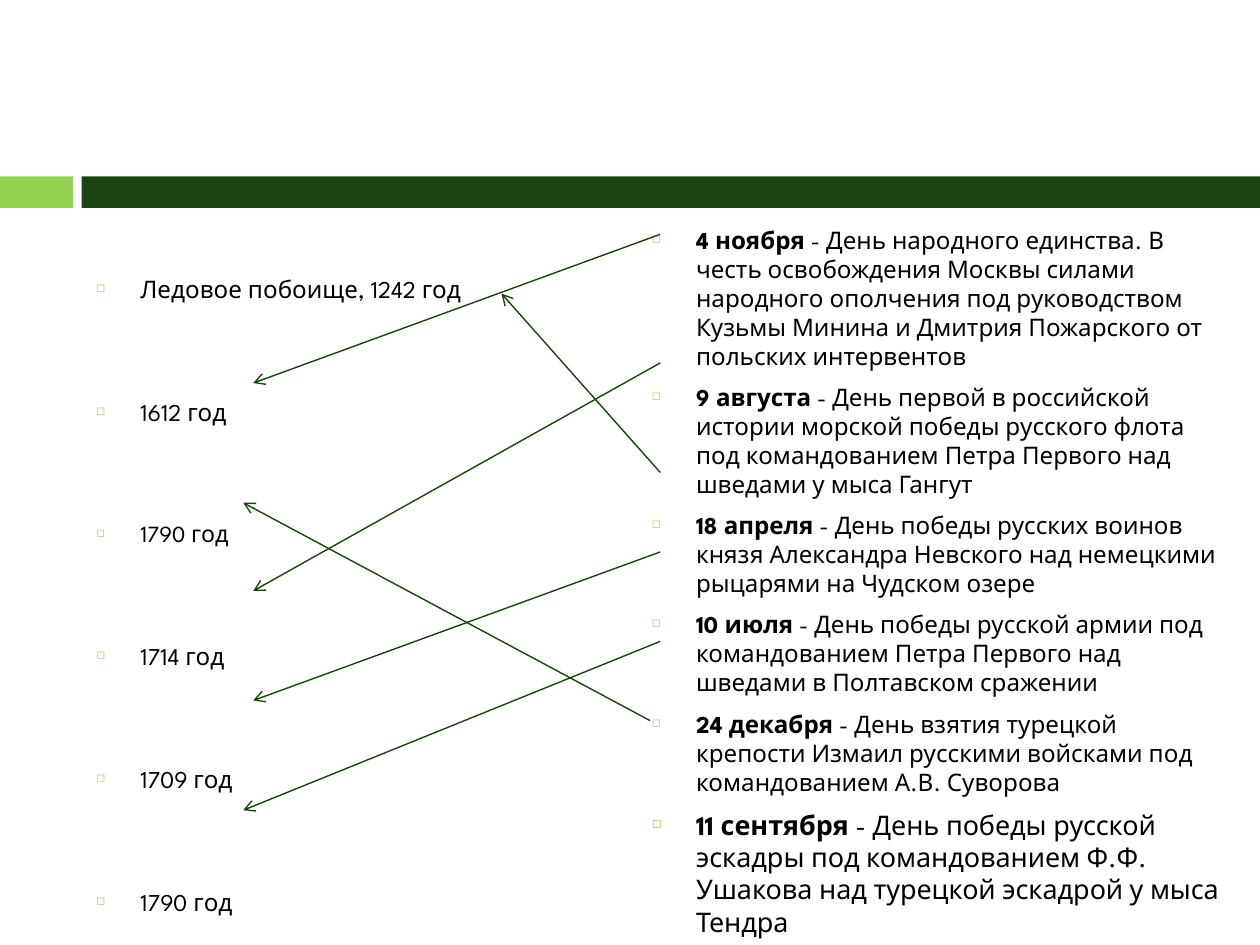
from lxml.etree import SubElement
from pptx import Presentation
from pptx.dml.color import RGBColor
from pptx.enum.shapes import MSO_CONNECTOR as Connector, MSO_SHAPE as Shape
from pptx.oxml.ns import qn
from pptx.util import Pt

LIME = RGBColor(0x92, 0xD0, 0x50)
FOREST = RGBColor(0x1A, 0x44, 0x10)
BLACK = RGBColor(0, 0, 0)
FONT = "League Spartan"
INDENT = 25.2

YEARS = [
    ("Ледовое побоище, 1242 год", 13.8),
    ("1612 год", 13.8),
    ("1790 год", 13.2),
    ("1714 год", 13.8),
    ("1709 год", 13.8),
    ("1790 год", 13.8),
]
DATES = [
    ("4 ноября", " - День народного единства. В честь освобождения Москвы силами народного "
     "ополчения под руководством Кузьмы Минина и Дмитрия Пожарского от польских интервентов", 13.8),
    ("9 августа", " - День первой в российской истории морской победы русского флота под "
     "командованием Петра Первого над шведами у мыса Гангут", 13.8),
    ("18 апреля", " - День победы русских воинов князя Александра Невского над немецкими "
     "рыцарями на Чудском озере", 13.8),
    ("10 июля", " - День победы русской армии под командованием Петра Первого над шведами "
     "в Полтавском сражении", 13.8),
    ("24 декабря", " - День взятия турецкой крепости Измаил русскими войсками под "
     "командованием А.В. Суворова", 13.8),
    ("11 сентября", " - День победы русской эскадры под командованием Ф.Ф. Ушакова над "
     "турецкой эскадрой у мыса Тендра", 15.4),
]
ARROWS = [
    (377.3, 270, 286.6, 167.8),
    (377.3, 133.9, 144.7, 218.9),
    (371.5, 411.8, 139, 287.3),
    (377.3, 207.4, 144.7, 337.7),
    (377.3, 315.4, 144.7, 400.3),
    (377.3, 366.5, 139, 463),
]


def add_band(slide, left, top, width, height):
    """Draw the two-coloured band across the given box."""
    tab, gap = 41.8, 4.8
    start = tab + gap
    for x, part, color in ((left, tab, LIME), (left + start, width - start, FOREST)):
        shape = slide.shapes.add_shape(Shape.RECTANGLE, Pt(x), Pt(top), Pt(part), Pt(height))
        shape.shadow.inherit = False
        shape.fill.solid()
        shape.fill.fore_color.rgb = color
        shape.line.fill.background()


def add_bullet(paragraph):
    """Give the paragraph a hanging lime square."""
    properties = paragraph._p.get_or_add_pPr()
    properties.set("marL", str(Pt(INDENT)))
    properties.set("indent", str(-Pt(INDENT)))
    color = SubElement(properties, qn("a:buClr"))
    SubElement(color, qn("a:srgbClr"), val=str(LIME))
    SubElement(properties, qn("a:buSzPct"), val="45000")
    SubElement(properties, qn("a:buChar"), char="◻")


def add_list(slide, left, top, width, height, items, gap, inset=3.6):
    """Fill the box with bulleted items, each a size and its (text, bold) runs."""
    frame = slide.shapes.add_textbox(Pt(left), Pt(top), Pt(width), Pt(height)).text_frame
    frame.word_wrap = True
    frame.margin_top = Pt(inset)
    for index, (size, runs) in enumerate(items):
        paragraph = frame.add_paragraph() if index else frame.paragraphs[0]
        add_bullet(paragraph)
        paragraph.space_before = Pt(gap if index else 0)
        for text, bold in runs:
            run = paragraph.add_run()
            run.text = text
            run.font.name = FONT
            run.font.size = Pt(size)
            run.font.bold = bold
            run.font.color.rgb = BLACK


def add_arrow(slide, start_x, start_y, end_x, end_y):
    """Draw a thin line with an open arrowhead at its end."""
    connector = slide.shapes.add_connector(
        Connector.STRAIGHT, Pt(start_x), Pt(start_y), Pt(end_x), Pt(end_y))
    connector.line.color.rgb = FOREST
    connector.line.width = Pt(0.79)
    SubElement(connector.line._get_or_add_ln(), qn("a:tailEnd"), type="arrow")
    SubElement(connector._element.spPr, qn("a:effectLst"))


def build_slide(presentation):
    """Add the slide that matches dates with their years."""
    slide = presentation.slides.add_slide(presentation.slide_layouts[6])
    add_band(slide, 0, 100.8, 720, 18)
    years = [(size, [(text, False)]) for text, size in YEARS]
    dates = [(size, [(day, True), (event, False)]) for day, event, size in DATES]
    add_list(slide, 48, 125.3, 306, 400.3, years, gap=53.6, inset=31.5)
    add_list(slide, 365.5, 125.3, 340, 414.7, dates, gap=7)
    for arrow in ARROWS:
        add_arrow(slide, *arrow)


def main():
    """Build and save the presentation."""
    presentation = Presentation()
    presentation.slide_width = Pt(720)
    presentation.slide_height = Pt(540)
    build_slide(presentation)
    presentation.save("out.pptx")


if __name__ == "__main__":
    main()
